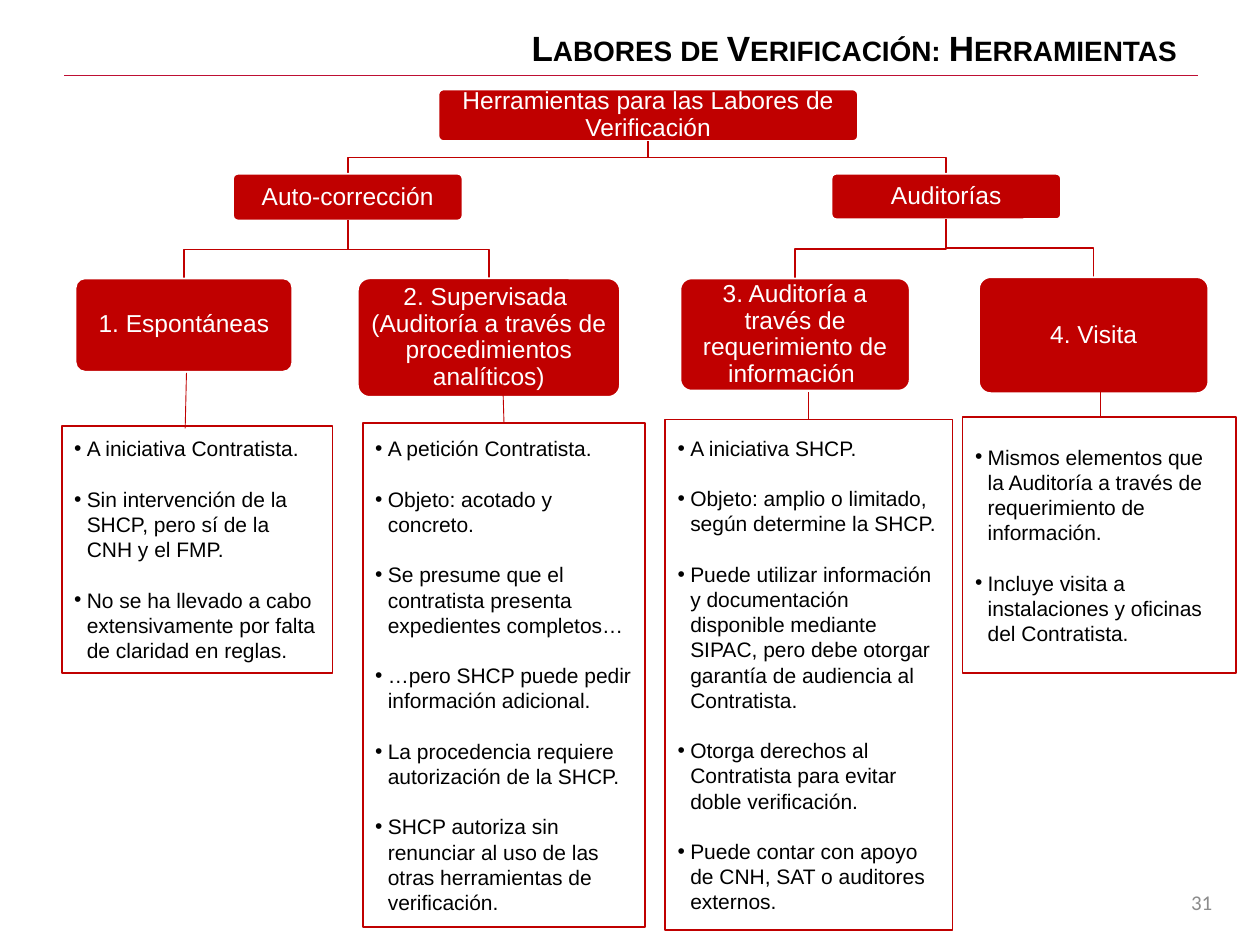
"""Build the slide on verification tools: a decision tree with four detail cards."""
from dataclasses import dataclass

from lxml.etree import SubElement
from pptx import Presentation
from pptx.dml.color import RGBColor
from pptx.enum.shapes import MSO_CONNECTOR, MSO_SHAPE
from pptx.enum.text import MSO_ANCHOR, PP_ALIGN
from pptx.oxml.ns import qn
from pptx.util import Inches, Pt


@dataclass(frozen=True)
class Theme:
    red: RGBColor = RGBColor(0xC0, 0x00, 0x00)
    crimson: RGBColor = RGBColor(0xBE, 0x0F, 0x34)
    white: RGBColor = RGBColor(0xFF, 0xFF, 0xFF)
    black: RGBColor = RGBColor(0x00, 0x00, 0x00)
    gray: RGBColor = RGBColor(0x8C, 0x8C, 0x8C)
    font: str = "Arial"
    number_font: str = "Calibri"
    title_size: Pt = Pt(20)
    node_size: Pt = Pt(14)
    body_size: Pt = Pt(12)
    body_line: Pt = Pt(14.4)


theme = Theme()
deck = Presentation()
deck.slide_width, deck.slide_height = Inches(10), Inches(7.5)
slide = deck.slides.add_slide(deck.slide_layouts[6])
shapes = slide.shapes
COLUMN, ROW = deck.slide_width / 100, deck.slide_height / 75


def on_grid(*lengths):
    """Turn alternating columns and rows into slide lengths."""
    return [round(n * (ROW if i % 2 else COLUMN)) for i, n in enumerate(lengths)]


def write(frame, texts, size, color, align, font=theme.font):
    """Fill a frame with one run per paragraph and return the paragraphs."""
    frame.word_wrap = True
    frame.vertical_anchor = MSO_ANCHOR.MIDDLE
    for i, text in enumerate(texts):
        paragraph = frame.paragraphs[0] if i == 0 else frame.add_paragraph()
        paragraph.alignment = align
        run = paragraph.add_run()
        run.text = text
        run.font.size, run.font.name = size, font
        run.font.color.rgb = color
    return frame.paragraphs


title = shapes.add_textbox(*on_grid(5, 1.6, 90, 4.4))
heading = write(title.text_frame, ["Labores de Verificación: Herramientas "],
                theme.title_size, theme.black, PP_ALIGN.RIGHT)[0].runs[0]
heading.font.bold = True
heading.font._element.set("cap", "small")

page_number = shapes.add_textbox(*on_grid(73.9, 69.6, 23.3, 4))
write(page_number.text_frame, ["31"], theme.body_size, theme.gray,
      PP_ALIGN.RIGHT, theme.number_font)

tree = {
    "root": (None, (34.8, 7.1, 33.3, 4.1),
             ["Herramientas para las Labores de Verificación"]),
    "self": ("root", (18.5, 13.8, 18.2, 3.7), ["Auto-corrección"]),
    "spontaneous": ("self", (6, 22.1, 17.2, 7.4), ["1. Espontáneas"]),
    "supervised": ("self", (28.4, 22.1, 20.8, 9.4),
                   ["2. Supervisada ",
                    "(Auditoría a través de procedimientos analíticos)"]),
    "audits": ("root", (66, 13.8, 18.2, 3.6), ["Auditorías"]),
    "request": ("audits", (54, 22.1, 18.2, 8.9),
                ["3. Auditoría a través de requerimiento de información "]),
    "visit": ("audits", (77.7, 22, 18.2, 9.2), ["4. Visita"]),
}

for parent, (left, top, width, height), label in tree.values():
    if parent:
        p_left, p_top, p_width, p_height = tree[parent][1]
        start_x, start_y = p_left + p_width / 2, p_top + p_height
        end_x, middle_y = left + width / 2, (start_y + top) / 2
        branch = shapes.build_freeform(*on_grid(start_x, start_y), scale=1.0)
        branch.add_line_segments(
            [on_grid(start_x, middle_y), on_grid(end_x, middle_y), on_grid(end_x, top)],
            close=False)
        elbow = branch.convert_to_shape()
        elbow.shadow.inherit = False
        elbow.fill.background()
        elbow.line.color.rgb, elbow.line.width = theme.red, Pt(1)

    node = shapes.add_shape(MSO_SHAPE.ROUNDED_RECTANGLE,
                            *on_grid(left, top, width, height))
    node.adjustments[0] = 0.1
    node.shadow.inherit = False
    node.fill.solid()
    node.fill.fore_color.rgb = theme.red
    node.line.color.rgb, node.line.width = theme.white, Pt(1)
    frame = node.text_frame
    frame.margin_left = frame.margin_right = Inches(0.06)
    frame.margin_top = frame.margin_bottom = Inches(0.06)
    for paragraph in write(frame, label, theme.node_size, theme.white, PP_ALIGN.CENTER):
        paragraph.line_spacing = 0.9

cards = [
    ((4.9, 33.8, 21.5, 19.6),
     ["A iniciativa Contratista.",
      "Sin intervención de la SHCP, pero sí de la CNH y el FMP.",
      "No se ha llevado a cabo extensivamente por falta de claridad en reglas."]),
    ((28.8, 33.6, 22.4, 40),
     ["A petición Contratista.",
      "Objeto: acotado y concreto.",
      "Se presume que el contratista presenta expedientes completos…",
      "…pero SHCP puede pedir información adicional.",
      "La procedencia requiere autorización de la SHCP.",
      "SHCP autoriza sin renunciar al uso de las otras herramientas de verificación."]),
    ((76.4, 33.1, 21.7, 20.3),
     ["Mismos elementos que la Auditoría a través de requerimiento de información.",
      "Incluye visita a instalaciones y oficinas del Contratista."]),
    ((52.8, 33.3, 22.8, 40.5),
     ["A iniciativa SHCP.",
      "Objeto: amplio o limitado, según determine la SHCP.",
      "Puede utilizar información y documentación disponible mediante SIPAC, "
      "pero debe otorgar garantía de audiencia al Contratista.",
      "Otorga derechos al Contratista para evitar doble verificación.",
      "Puede contar con apoyo de CNH, SAT o auditores externos."]),
]

for area, points in cards:
    card = shapes.add_shape(MSO_SHAPE.RECTANGLE, *on_grid(*area))
    card.shadow.inherit = False
    card.fill.background()
    card.line.color.rgb, card.line.width = theme.red, Pt(1)
    items = write(card.text_frame, points, theme.body_size, theme.black, PP_ALIGN.LEFT)
    for item in items:
        item.line_spacing = theme.body_line
        if item.text != points[-1]:
            item.space_after = theme.body_line
        properties = item._p.get_or_add_pPr()
        properties.set("marL", str(Inches(0.1)))
        properties.set("indent", str(-Inches(0.1)))
        SubElement(properties, qn("a:buFont")).set("typeface", theme.font)
        SubElement(properties, qn("a:buChar")).set("char", "•")

rules = [
    ((5.1, 6, 95.1, 6), theme.crimson, 1),
    ((14.7, 34, 14.8, 29.6), theme.red, 0.5),
    ((40, 33.6, 39.9, 30.2), theme.red, 0.5),
    ((87.3, 33.1, 87.3, 29.2), theme.red, 0.5),
    ((64.2, 33.3, 64.2, 31.1), theme.red, 0.5),
]
for ends, color, weight in rules:
    rule = shapes.add_connector(MSO_CONNECTOR.STRAIGHT, *on_grid(*ends))
    rule.line.color.rgb, rule.line.width = color, Pt(weight)
    SubElement(rule._element.spPr, qn("a:effectLst"))

deck.save("out.pptx")
